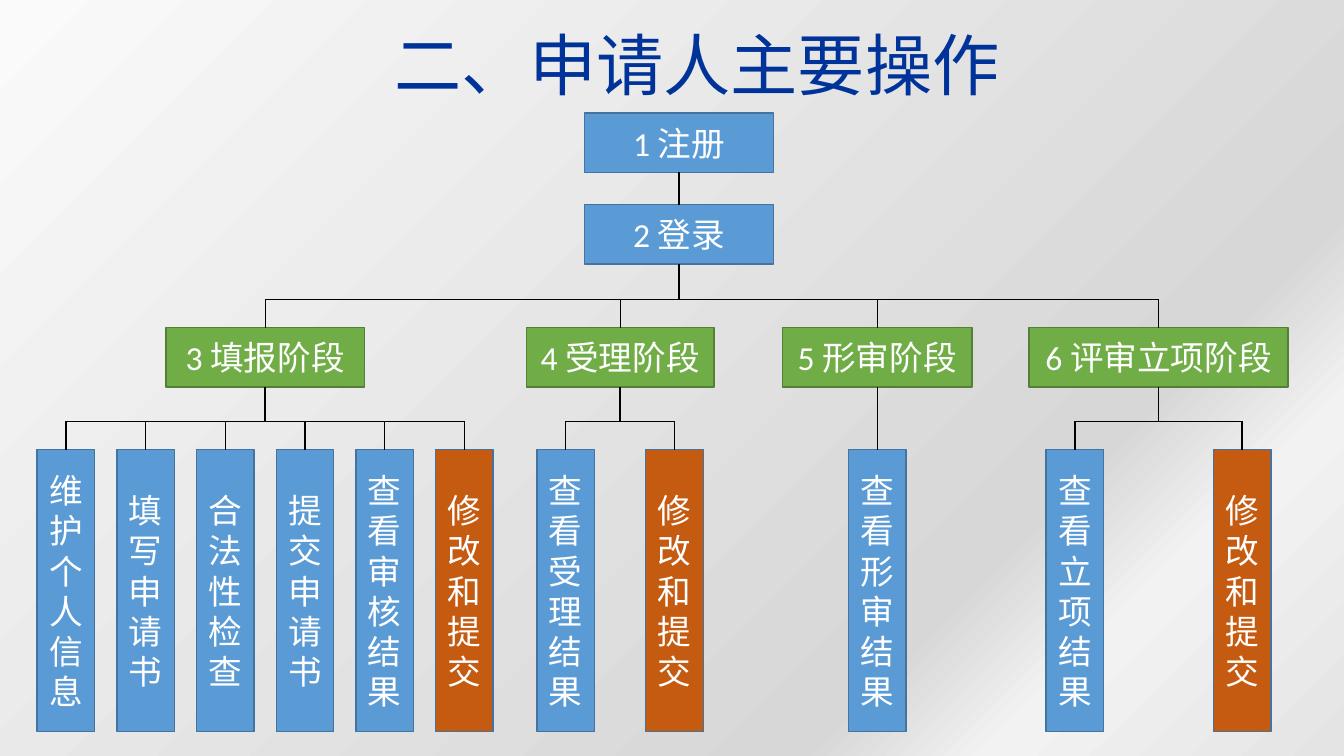
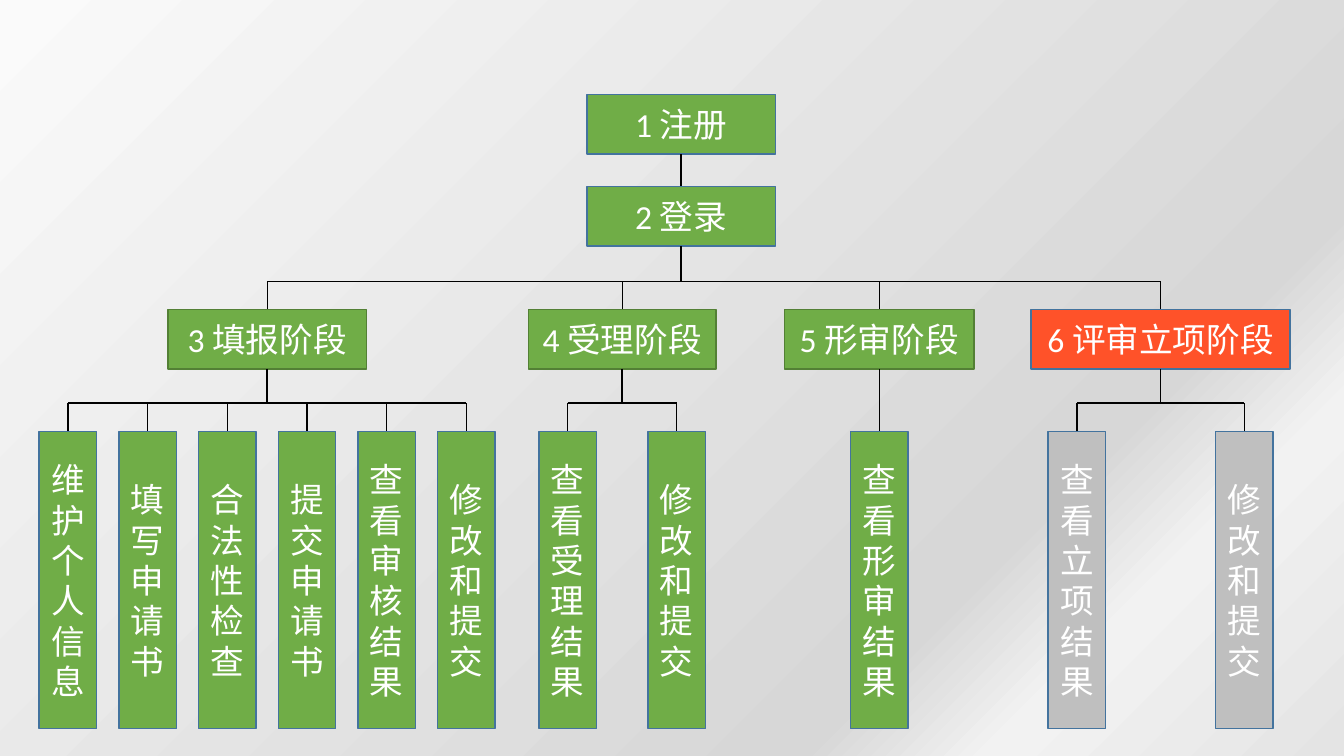
from collections import namedtuple

from pptx import Presentation
from pptx.dml.color import RGBColor
from pptx.enum.shapes import MSO_CONNECTOR, MSO_SHAPE
from pptx.enum.text import MSO_ANCHOR, MSO_AUTO_SIZE, PP_ALIGN
from pptx.oxml import parse_xml
from pptx.oxml.ns import nsdecls, qn
from pptx.util import Inches, Pt

WIDTH, HEIGHT = Inches(13.33), Inches(7.5)
COLUMN, ROW = WIDTH / 100, HEIGHT / 100

BLUE, GREEN, ORANGE = "5B9BD5", "70AD47", "C55A11"
RED, GREY = "FF5229", "BFBFBF"
BLUE_EDGE, GREEN_EDGE = "43739E", "538035"
NAVY, WHITE, BLACK = "003399", "FFFFFF", "000000"
BACKGROUND_STOPS = [(0, "FAFAFA"), (74, "D7D7D7"), (83, "F2F2F2"), (100, "E4E4E4")]

BOX_FONT = {"name": "Calibri", "size": Pt(24), "bold": False}
TITLE_FONT = {"name": "Arial", "size": Pt(48), "bold": False}
TITLE_FRAME = {"vertical_anchor": MSO_ANCHOR.MIDDLE, "auto_size": MSO_AUTO_SIZE.NONE}

TOP, BOTTOM = 0, 2
BOX_HEIGHT = 7.87
STEP_CENTRE, STEP_WIDTH = 50.53, 14.03
LEAF_WIDTH = 4.28
STEP_ROWS = (14.93, 27.07)
STAGE_BUS_ROW, STAGE_ROW = 39.6, 43.33
LEAF_BUS_ROW, LEAF_ROW = 55.73, 59.47

Stage = namedtuple("Stage", "label centre width gap leaves")
Scheme = namedtuple("Scheme", "step stages leaves shift bottom")

STEPS = ("1 注册", "2 登录")
REVISION = "修改和提交"
STAGES = (
    Stage("3 填报阶段", 19.73, 14.78, 5.93,
          ("维护个人信息", "填写申请书", "合法性检查", "提交申请书", "查看审核结果", REVISION)),
    Stage("4 受理阶段", 46.14, 13.95, 8.1, ("查看受理结果", REVISION)),
    Stage("5 形审阶段", 65.27, 14.1, 0, ("查看形审结果",)),
    Stage("6 评审立项阶段", 86.2, 19.28, 12.45, ("查看立项结果", REVISION)),
)
OVERVIEW = Scheme(BLUE, [GREEN] * 4, [(BLUE, ORANGE)] * 4, (0, 0), 96.8)
PROGRESS = Scheme(GREEN, [GREEN] * 3 + [RED], [(GREEN, GREEN)] * 3 + [(GREY, GREY)],
                  (0.15, -2.4), 96.4)


def colour(value):
    return RGBColor.from_string(value)


def apply_format(target, values):
    for name, value in values.items():
        setattr(target, name, value)


def set_background(master):
    fill = master.background.fill
    fill.gradient()
    fill.gradient_angle = 315
    stops = master.element.find(".//" + qn("a:gsLst"))
    for stop in list(stops):
        stops.remove(stop)
    for position, value in BACKGROUND_STOPS:
        stops.append(parse_xml(
            f'<a:gs {nsdecls("a")} pos="{position * 1000}"><a:srgbClr val="{value}"/></a:gs>'))


def write_text(shape, text, font, value):
    paragraph = shape.text_frame.paragraphs[0]
    paragraph.alignment = PP_ALIGN.CENTER
    run = paragraph.add_run()
    run.text = text
    apply_format(run.font, font)
    run.font.color.rgb = colour(value)
    return run


def add_title(slide, text):
    title = slide.shapes.title
    apply_format(title, {"left": round(19.73 * COLUMN), "top": round(2.4 * ROW),
                         "width": round(64.29 * COLUMN), "height": round(12.13 * ROW)})
    apply_format(title.text_frame, TITLE_FRAME)
    run = write_text(title, text, TITLE_FONT, NAVY)
    run._r.find(".//" + qn("a:solidFill")).addnext(parse_xml(
        f'<a:effectLst {nsdecls("a")}><a:outerShdw blurRad="38100" dist="38100" dir="2700000">'
        '<a:srgbClr val="000000"><a:alpha val="43000"/></a:srgbClr></a:outerShdw></a:effectLst>'))


class Chart:
    def __init__(self, slide, scheme):
        self.shapes = slide.shapes
        self.scheme = scheme

    def point(self, column, row):
        across, down = self.scheme.shift
        return round((column + across) * COLUMN), round((row + down) * ROW)

    def box(self, text, centre, row, width, fill, edge=BLUE_EDGE, bottom=None):
        left, top = self.point(centre - width / 2, row)
        height = round(BOX_HEIGHT * ROW) if bottom is None else round(bottom * ROW) - top
        shape = self.shapes.add_shape(MSO_SHAPE.RECTANGLE, left, top,
                                      round(width * COLUMN), height)
        shape.shadow.inherit = False
        shape.fill.solid()
        shape.fill.fore_color.rgb = colour(fill)
        shape.line.color.rgb = colour(edge)
        shape.line.width = Pt(1)
        apply_format(shape.text_frame, {"word_wrap": bottom is not None,
                                        "vertical_anchor": MSO_ANCHOR.MIDDLE})
        write_text(shape, text, BOX_FONT, WHITE)
        return shape

    def line(self, start, end, start_box=None, end_box=None, weight=1):
        connector = self.shapes.add_connector(
            MSO_CONNECTOR.STRAIGHT, *self.point(*start), *self.point(*end))
        if start_box is not None:
            connector.begin_connect(start_box, BOTTOM)
        if end_box is not None:
            connector.end_connect(end_box, TOP)
        connector.line.color.rgb = colour(BLACK)
        connector.line.width = Pt(weight)
        connector._element.spPr.append(parse_xml(f'<a:effectLst {nsdecls("a")}/>'))

    def steps(self):
        register, login = [self.box(text, STEP_CENTRE, row, STEP_WIDTH, self.scheme.step)
                           for text, row in zip(STEPS, STEP_ROWS)]
        self.line((STEP_CENTRE, STEP_ROWS[0] + BOX_HEIGHT), (STEP_CENTRE, STEP_ROWS[1]),
                  register, login)
        self.line((STEP_CENTRE, STEP_ROWS[1] + BOX_HEIGHT), (STEP_CENTRE, STAGE_BUS_ROW), login)
        self.line((STAGES[0].centre, STAGE_BUS_ROW), (STAGES[-1].centre, STAGE_BUS_ROW))

    def stage(self, stage, fill, leaf_fills):
        edge = GREEN_EDGE if fill == GREEN else BLUE_EDGE
        head = self.box(stage.label, stage.centre, STAGE_ROW, stage.width, fill, edge)
        self.line((stage.centre, STAGE_BUS_ROW), (stage.centre, STAGE_ROW),
                  end_box=head, weight=0.5)
        middle = (len(stage.leaves) - 1) / 2
        centres = [stage.centre + (index - middle) * stage.gap
                   for index in range(len(stage.leaves))]
        leaves = [self.box(text, centre, LEAF_ROW, LEAF_WIDTH, leaf_fills[text == REVISION],
                           bottom=self.scheme.bottom)
                  for text, centre in zip(stage.leaves, centres)]
        trunk = (stage.centre, STAGE_ROW + BOX_HEIGHT)
        if len(leaves) == 1:
            self.line(trunk, (stage.centre, LEAF_ROW), head, leaves[0])
            return
        self.line(trunk, (stage.centre, LEAF_BUS_ROW), head)
        self.line((centres[0], LEAF_BUS_ROW), (centres[-1], LEAF_BUS_ROW))
        for centre, leaf in zip(centres, leaves):
            self.line((centre, LEAF_BUS_ROW), (centre, LEAF_ROW), end_box=leaf)


def add_chart_slide(presentation, scheme, title=None):
    layout_name = "Title Only" if title else "Blank"
    slide = presentation.slides.add_slide(
        presentation.slide_layouts.get_by_name(layout_name))
    if title:
        add_title(slide, title)
    chart = Chart(slide, scheme)
    chart.steps()
    for stage, fill, leaf_fills in zip(STAGES, scheme.stages, scheme.leaves):
        chart.stage(stage, fill, leaf_fills)


def main():
    presentation = Presentation()
    apply_format(presentation, {"slide_width": WIDTH, "slide_height": HEIGHT})
    set_background(presentation.slide_master)
    add_chart_slide(presentation, OVERVIEW, "二、申请人主要操作")
    add_chart_slide(presentation, PROGRESS)
    presentation.save("out.pptx")


if __name__ == "__main__":
    main()
